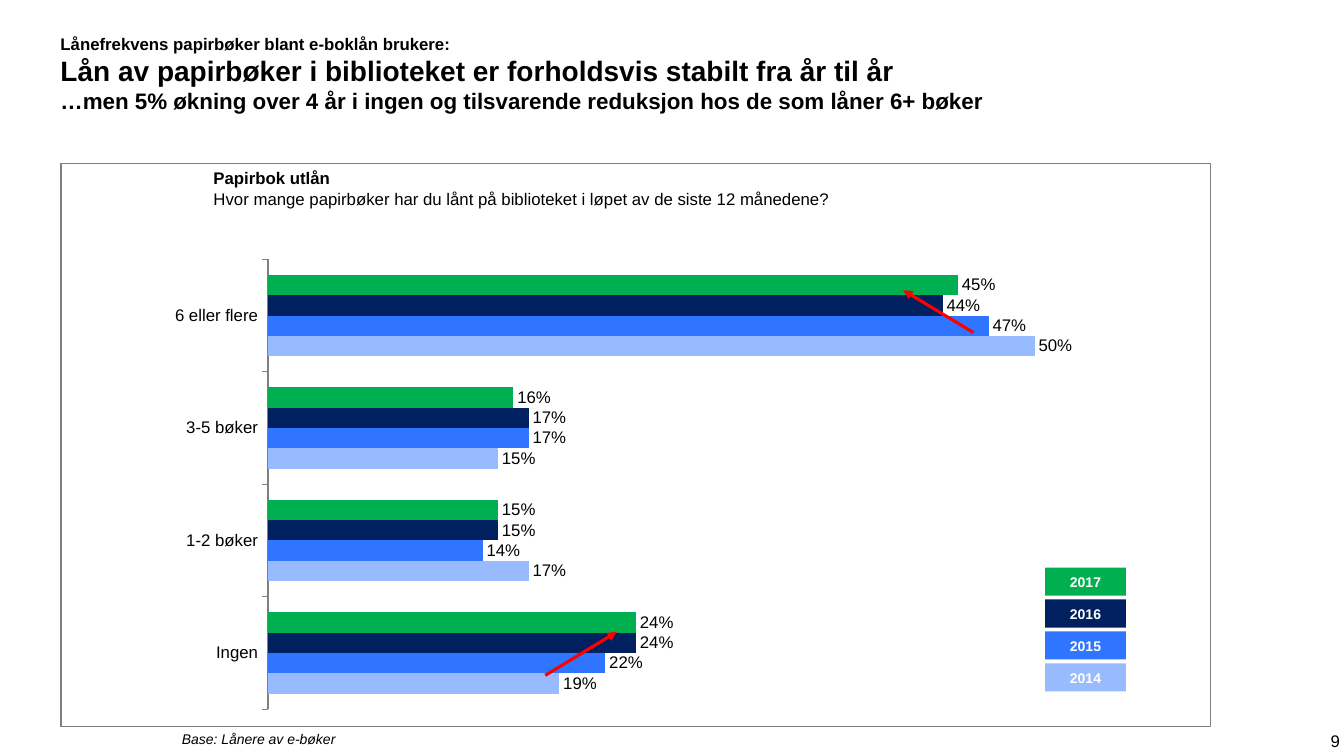
import pptx
import pptx.chart.data
import pptx.dml.color
import pptx.enum.chart
import pptx.enum.shapes
import pptx.enum.text
import pptx.oxml
import pptx.oxml.ns
import pptx.util

Pt = pptx.util.Pt
ALIGN = pptx.enum.text.PP_ALIGN
ANCHOR = pptx.enum.text.MSO_ANCHOR
FONT = "Arial"
BLACK, WHITE, GREY, RED = "000000", "FFFFFF", "808080", "FF0000"

ANSWERS = ["6 eller flere", "3-5 bøker", "1-2 bøker", "Ingen"]
YEARS = [
    ("2017", "00B050", [0.45, 0.16, 0.15, 0.24]),
    ("2016", "002060", [0.44, 0.17, 0.15, 0.24]),
    ("2015", "3075FF", [0.47, 0.17, 0.14, 0.22]),
    ("2014", "98BAFF", [0.50, 0.15, 0.17, 0.19]),
]


def rgb(value):
    return pptx.dml.color.RGBColor.from_string(value)


def style(font, size, color=BLACK, bold=False, italic=False):
    font.name, font.size, font.bold, font.italic = FONT, Pt(size), bold, italic
    font.color.rgb = rgb(color)


def place(shape, box):
    shape.left, shape.top, shape.width, shape.height = map(Pt, box)


def write(frame, lines, align=ALIGN.LEFT):
    """Fill a frame; each line is (text, size, further font settings)."""
    frame.word_wrap = True
    frame.text = "\n".join(text for text, _, _ in lines)
    for paragraph, (_, size, look) in zip(frame.paragraphs, lines):
        paragraph.alignment = align
        style(paragraph.runs[0].font, size, **look)


def add_text(slide, box, lines, align=ALIGN.LEFT):
    frame = slide.shapes.add_textbox(*map(Pt, box)).text_frame
    write(frame, lines, align)
    return frame


def add_heading(slide, box):
    heading = slide.shapes.title
    place(heading, box)
    frame = heading.text_frame
    frame.auto_size = pptx.enum.text.MSO_AUTO_SIZE.NONE
    frame.vertical_anchor = ANCHOR.TOP
    frame.margin_left = frame.margin_top = frame.margin_right = frame.margin_bottom = 0
    write(frame, [
        ("Lånefrekvens papirbøker blant e-boklån brukere:", 12, {"bold": True}),
        ("Lån av papirbøker i biblioteket er forholdsvis stabilt fra år til år", 20, {"bold": True}),
        ("…men 5% økning over 4 år i ingen og tilsvarende reduksjon hos de som låner 6+ bøker",
         16, {"bold": True}),
    ])


def frame_chart(chart, x, y, width, height):
    """Fix the inner plot area and draw the border round the chart."""
    ns = pptx.oxml.ns.nsdecls("c", "a")
    plot_area = chart._chartSpace.chart.plotArea
    for layout in plot_area.findall(pptx.oxml.ns.qn("c:layout")):
        plot_area.remove(layout)
    plot_area.insert(0, pptx.oxml.parse_xml(
        f'<c:layout {ns}><c:manualLayout><c:layoutTarget val="inner"/>'
        '<c:xMode val="edge"/><c:yMode val="edge"/>'
        f'<c:x val="{x}"/><c:y val="{y}"/><c:w val="{width}"/><c:h val="{height}"/>'
        '</c:manualLayout></c:layout>'))
    chart._chartSpace.find(pptx.oxml.ns.qn("c:txPr")).addprevious(pptx.oxml.parse_xml(
        f'<c:spPr {ns}><a:noFill/><a:ln w="9525"><a:solidFill>'
        f'<a:srgbClr val="{GREY}"/></a:solidFill></a:ln></c:spPr>'))


def add_loan_chart(slide, box):
    loans = pptx.chart.data.CategoryChartData(number_format="0%")
    loans.categories = ANSWERS
    for year, _, shares in YEARS:
        loans.add_series(year, shares)
    chart = slide.shapes.add_chart(
        pptx.enum.chart.XL_CHART_TYPE.BAR_CLUSTERED, *map(Pt, box), loans).chart
    style(chart.font, 12)
    chart.has_title = chart.has_legend = False
    frame_chart(chart, 0.18, 0.17, 0.8, 0.8)

    # Axes
    answers, shares = chart.category_axis, chart.value_axis
    answers.reverse_order = True
    answers.has_major_gridlines = shares.has_major_gridlines = False
    answers.major_tick_mark = pptx.enum.chart.XL_TICK_MARK.OUTSIDE
    answers.format.line.color.rgb = rgb(GREY)
    answers.format.line.width = Pt(0.75)
    shares.minimum_scale, shares.maximum_scale = 0, 0.6
    shares.visible = False

    # Bars and their labels
    plot = chart.plots[0]
    plot.gap_width, plot.overlap, plot.vary_by_categories = 150, 0, False
    for series, (_, color, _) in zip(plot.series, YEARS):
        series.format.fill.solid()
        series.format.fill.fore_color.rgb = rgb(color)
        labels = series.data_labels
        labels.show_value = True
        labels.number_format, labels.number_format_is_linked = "0%", False
        labels.position = pptx.enum.chart.XL_LABEL_POSITION.OUTSIDE_END
        style(labels.font, 12)


def add_year_key(slide, box):
    left, top, width, height = box
    pitch = height / len(YEARS)
    for row, (year, color, _) in enumerate(YEARS):
        key = slide.shapes.add_shape(
            pptx.enum.shapes.MSO_SHAPE.RECTANGLE,
            Pt(left), Pt(top + row * pitch), Pt(width), Pt(pitch - 2.7))
        key.shadow.inherit = False
        key.fill.solid()
        key.fill.fore_color.rgb = rgb(color)
        key.line.fill.background()
        key.text_frame.vertical_anchor = ANCHOR.MIDDLE
        write(key.text_frame, [(year, 10, {"color": WHITE, "bold": True})], ALIGN.CENTER)


def add_trend_arrow(slide, start, end):
    arrow = slide.shapes.add_connector(
        pptx.enum.shapes.MSO_CONNECTOR.STRAIGHT, *map(Pt, start + end))
    arrow.line.color.rgb = rgb(RED)
    arrow.line.width = Pt(2.25)
    ns = pptx.oxml.ns.nsdecls("a")
    arrow.line._get_or_add_ln().append(
        pptx.oxml.parse_xml(f'<a:tailEnd {ns} type="triangle"/>'))
    arrow._element.spPr.append(pptx.oxml.parse_xml(f"<a:effectLst {ns}/>"))


def add_loan_panel(slide, box):
    """Chart with its question, year key, trend arrows and base note."""
    left, top, width, height = box
    add_loan_chart(slide, box)
    add_text(slide, (left + 102.2, top, 483, 36), [
        ("Papirbok utlån", 12, {"bold": True}),
        ("Hvor mange papirbøker har du lånt på biblioteket i løpet av de siste 12 månedene?", 12, {}),
    ])
    add_year_key(slide, (left + 703.4, top + 288.8, 57.6, 91.2))
    for start, end in [((346.3, 365.8), (397.4, 334.8)), ((652.3, 121), (601.9, 90.7))]:
        add_trend_arrow(slide, (left + start[0], top + start[1]), (left + end[0], top + end[1]))
    add_text(slide, (left + 79.6, top + height - 1, 142, 19.4),
             [("Base: Lånere av e-bøker", 10, {"italic": True})])


def add_page_number(slide, box):
    frame = add_text(slide, box, [("9", 12, {})], ALIGN.RIGHT)
    frame.vertical_anchor = ANCHOR.MIDDLE
    frame.margin_right = Pt(3)


def main():
    presentation = pptx.Presentation()
    presentation.slide_width, presentation.slide_height = Pt(960), Pt(540)
    slide = presentation.slides.add_slide(presentation.slide_layouts[5])
    add_heading(slide, (43.2, 24, 777, 72))
    add_loan_panel(slide, (43.2, 116.6, 822.2, 402.5))
    add_page_number(slide, (900, 518, 60, 22))
    presentation.save("out.pptx")


if __name__ == "__main__":
    main()
